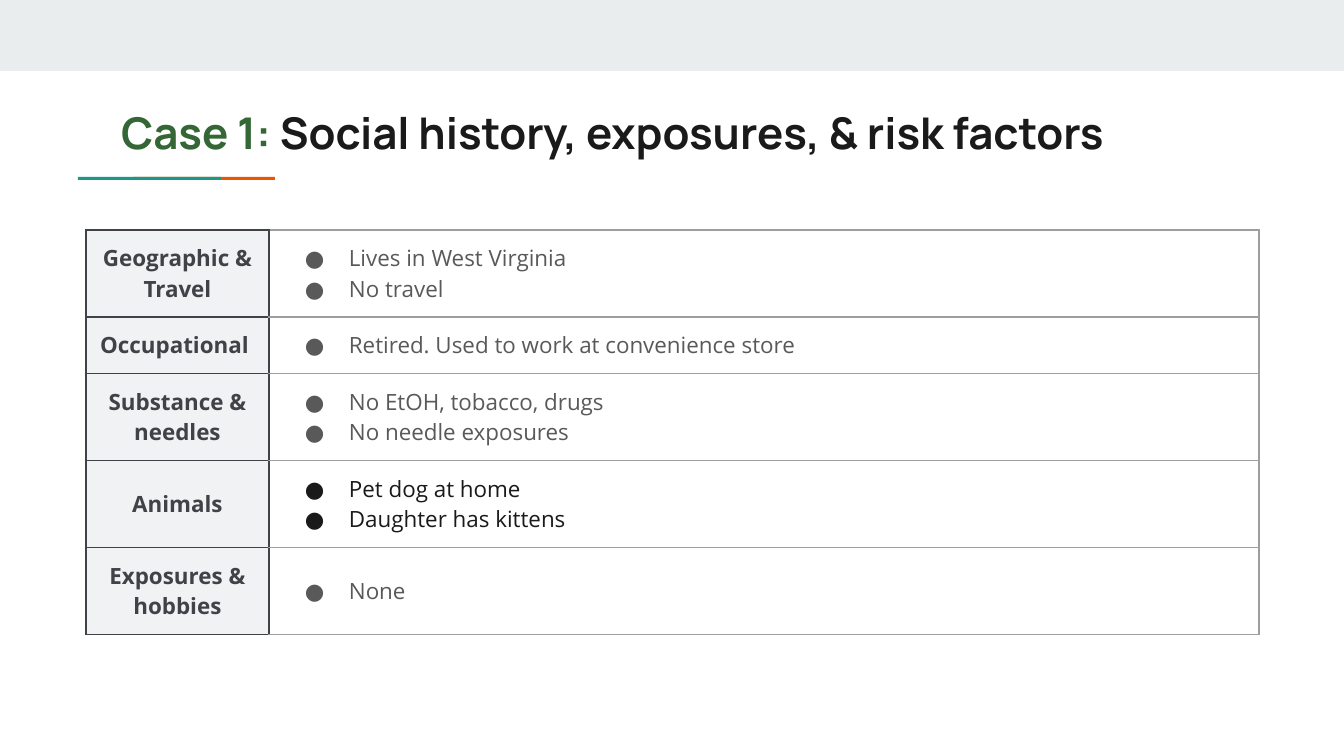
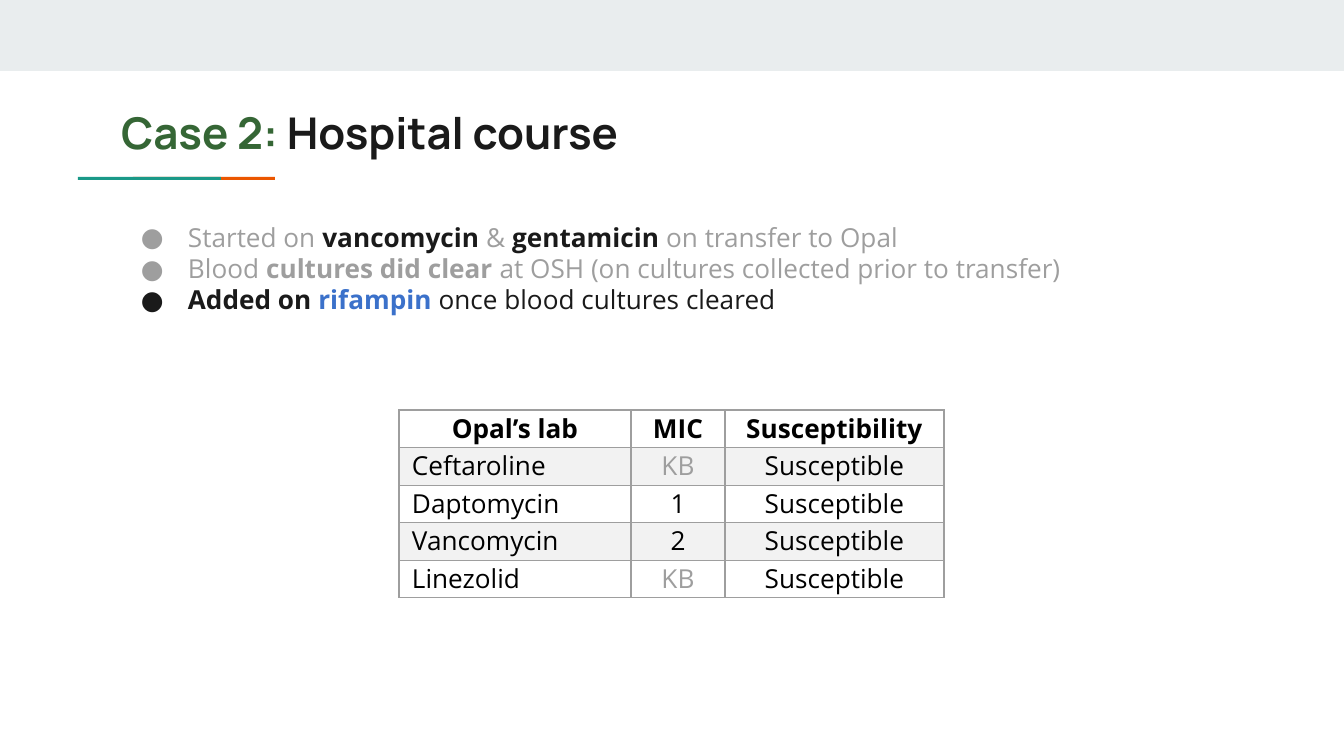
from lxml.etree import SubElement
from pptx import Presentation
from pptx.dml.color import RGBColor
from pptx.enum.shapes import MSO_SHAPE as Shape
from pptx.enum.text import MSO_ANCHOR as Anchor, MSO_AUTO_SIZE as AutoSize, PP_ALIGN as Align
from pptx.oxml.ns import qn
from pptx.util import Emu, Pt

WIDTH, HEIGHT = 1344, 756
INSET = 13

BAND = RGBColor(0xE9, 0xED, 0xEE)
ORANGE = RGBColor(0xEB, 0x56, 0x00)
TEAL = RGBColor(0x1A, 0x99, 0x88)
GREEN = RGBColor(0x35, 0x66, 0x35)
BLUE = RGBColor(0x3B, 0x71, 0xCA)
INK = RGBColor(0x1A, 0x1A, 0x1A)
BLACK = RGBColor(0x00, 0x00, 0x00)
SLATE = RGBColor(0x40, 0x42, 0x47)
GREY = RGBColor(0x59, 0x59, 0x59)
MUTED = RGBColor(0x9E, 0x9E, 0x9E)
LABEL_FILL = RGBColor(0xF1, 0xF2, 0xF3)
STRIPE = RGBColor(0xF2, 0xF2, 0xF2)

TITLE_FONT, BODY_FONT = "Manrope", "Open Sans"

HISTORY = [
    # label, details, detail colour, row height
    ("Geographic & Travel", ["Lives in West Virginia", "No travel"], GREY, 59),
    ("Occupational ", ["Retired. Used to work at convenience store"], GREY, 39),
    ("Substance & needles", ["No EtOH, tobacco, drugs", "No needle exposures"], GREY, 81),
    ("Animals", ["Pet dog at home", "Daughter has kittens"], INK, 75),
    ("Exposures & hobbies", ["None"], GREY, 78),
]

COURSE = [
    [("Started on ", MUTED, False), ("vancomycin ", INK, True), ("& ", MUTED, False),
     ("gentamicin ", INK, True), ("on transfer to Opal", MUTED, False)],
    [("Blood ", MUTED, False), ("cultures did clear", MUTED, True),
     (" at OSH (on cultures collected prior to transfer)", MUTED, False)],
    [("Added on ", INK, True), ("rifampin ", BLUE, True),
     ("once blood cultures cleared", INK, False)],
]

LAB = [
    ("Opal’s lab", "MIC", "Susceptibility"),
    ("Ceftaroline", "KB", "Susceptible"),
    ("Daptomycin", "1", "Susceptible"),
    ("Vancomycin", "2", "Susceptible"),
    ("Linezolid", "KB", "Susceptible"),
]


def px(n):
    return Emu(round(n * 914400 / 134.4))


def set_margins(obj, left, top, right, bottom):
    sides = {"left": left, "top": top, "right": right, "bottom": bottom}
    for side, n in sides.items():
        setattr(obj, f"margin_{side}", px(n))


def add_run(p, text, color, bold, size, font=BODY_FONT):
    r = p.add_run()
    r.text = text
    for name, value in {"size": Pt(size), "name": font, "bold": bold}.items():
        setattr(r.font, name, value)
    r.font.color.rgb = color


def paragraphs(tf, count):
    """Yield count paragraphs, starting with the one already in tf."""
    for i in range(count):
        yield tf.add_paragraph() if i else tf.paragraphs[0]


def set_bullet(p, color, hang):
    pPr = p._p.get_or_add_pPr()
    pPr.set("marL", str(px(67)))
    pPr.set("indent", str(-px(hang)))
    clr = SubElement(pPr, qn("a:buClr"))
    SubElement(clr, qn("a:srgbClr"), val=str(color))
    SubElement(pPr, qn("a:buFont"), typeface=BODY_FONT)
    SubElement(pPr, qn("a:buChar"), char="●")


def add_bar(s, x, y, w, h, color):
    bar = s.shapes.add_shape(Shape.RECTANGLE, px(x), px(y), px(w), px(h))
    bar.shadow.inherit = False
    bar.fill.solid()
    bar.fill.fore_color.rgb = color
    bar.line.fill.background()


def add_case_slide(prs, case, topic):
    s = prs.slides.add_slide(prs.slide_layouts[5])
    add_bar(s, 0, 0, WIDTH, 71, BAND)
    add_bar(s, 133, 177, 142, 3, ORANGE)
    add_bar(s, 78, 177, 143, 3, TEAL)

    title = s.shapes.title
    title.left, title.top, title.width, title.height = map(px, (108, 93, 1130, 79))
    tf = title.text_frame
    tf.word_wrap = True
    tf.auto_size = AutoSize.NONE
    tf.vertical_anchor = Anchor.TOP
    set_margins(tf, INSET, INSET, INSET, INSET)
    p = tf.paragraphs[0]
    p.alignment = Align.LEFT
    p.line_spacing = 1.0
    add_run(p, case, GREEN, True, 23.4, TITLE_FONT)
    add_run(p, f" {topic}", INK, True, 23.4, TITLE_FONT)
    return s


def add_grid(s, x, y, col_widths, row_heights):
    """Add a plain table; widths and heights are in EMU."""
    table = s.shapes.add_table(len(row_heights), len(col_widths), px(x), px(y),
                               sum(col_widths), sum(row_heights)).table
    table.first_row = table.horz_banding = False
    for col, w in zip(table.columns, col_widths):
        col.width = w
    for row, h in zip(table.rows, row_heights):
        row.height = h
    return table


def style_cell(cell, border, fill=None, left=None):
    """Draw the four borders, then the fill; left overrides the left border."""
    tcPr = cell._tc.get_or_add_tcPr()
    for side in "LRTB":
        ln = SubElement(tcPr, qn(f"a:ln{side}"), w=str(Pt(0.75)))
        color = left if side == "L" and left else border
        SubElement(SubElement(ln, qn("a:solidFill")), qn("a:srgbClr"), val=str(color))
    if fill:
        cell.fill.solid()
        cell.fill.fore_color.rgb = fill
    else:
        cell.fill.background()


def add_history_table(s, x, y):
    table = add_grid(s, x, y, [px(183), px(990)], [px(row[3]) for row in HISTORY])
    for i, (label, details, color, _) in enumerate(HISTORY):
        head, body = table.cell(i, 0), table.cell(i, 1)
        style_cell(head, SLATE, LABEL_FILL)
        style_cell(body, MUTED, left=SLATE)
        for cell in (head, body):
            set_margins(cell, INSET, INSET, INSET, INSET)
            cell.vertical_anchor = Anchor.MIDDLE
        p = head.text_frame.paragraphs[0]
        p.alignment = Align.CENTER
        add_run(p, label, SLATE, True, 12)
        for p, text in zip(paragraphs(body.text_frame, len(details)), details):
            set_bullet(p, color, 44)
            add_run(p, text, color, False, 12)


def add_course_bullets(s, x, y, w, h):
    tf = s.shapes.add_textbox(px(x), px(y), px(w), px(h)).text_frame
    tf.word_wrap = True
    set_margins(tf, INSET, 17, INSET, INSET)
    for p, runs in zip(paragraphs(tf, len(COURSE)), COURSE):
        set_bullet(p, runs[0][1], 47)
        for text, color, bold in runs:
            add_run(p, text, color, bold, 14)


def add_lab_table(s, x, y, h):
    row_heights = [px(h) // len(LAB)] * len(LAB)
    table = add_grid(s, x, y, [px(232), px(94), px(219)], row_heights)
    for i, row in enumerate(LAB):
        for j, text in enumerate(row):
            cell = table.cell(i, j)
            style_cell(cell, MUTED, STRIPE if i % 2 else None)
            side = 0 if j else INSET
            set_margins(cell, side, 0, side, 0)
            p = cell.text_frame.paragraphs[0]
            p.alignment = Align.CENTER if j or i == 0 else Align.LEFT
            add_run(p, text, MUTED if text == "KB" else BLACK, i == 0, 14)


def main():
    prs = Presentation()
    prs.slide_width, prs.slide_height = px(WIDTH), px(HEIGHT)

    s = add_case_slide(prs, "Case 1:", "Social history, exposures, & risk factors")
    add_history_table(s, 86, 230)

    s = add_case_slide(prs, "Case 2:", "Hospital course")
    add_course_bullets(s, 108, 204, 1130, 445)
    add_lab_table(s, 399, 410, 188)

    prs.save("out.pptx")


if __name__ == "__main__":
    main()
